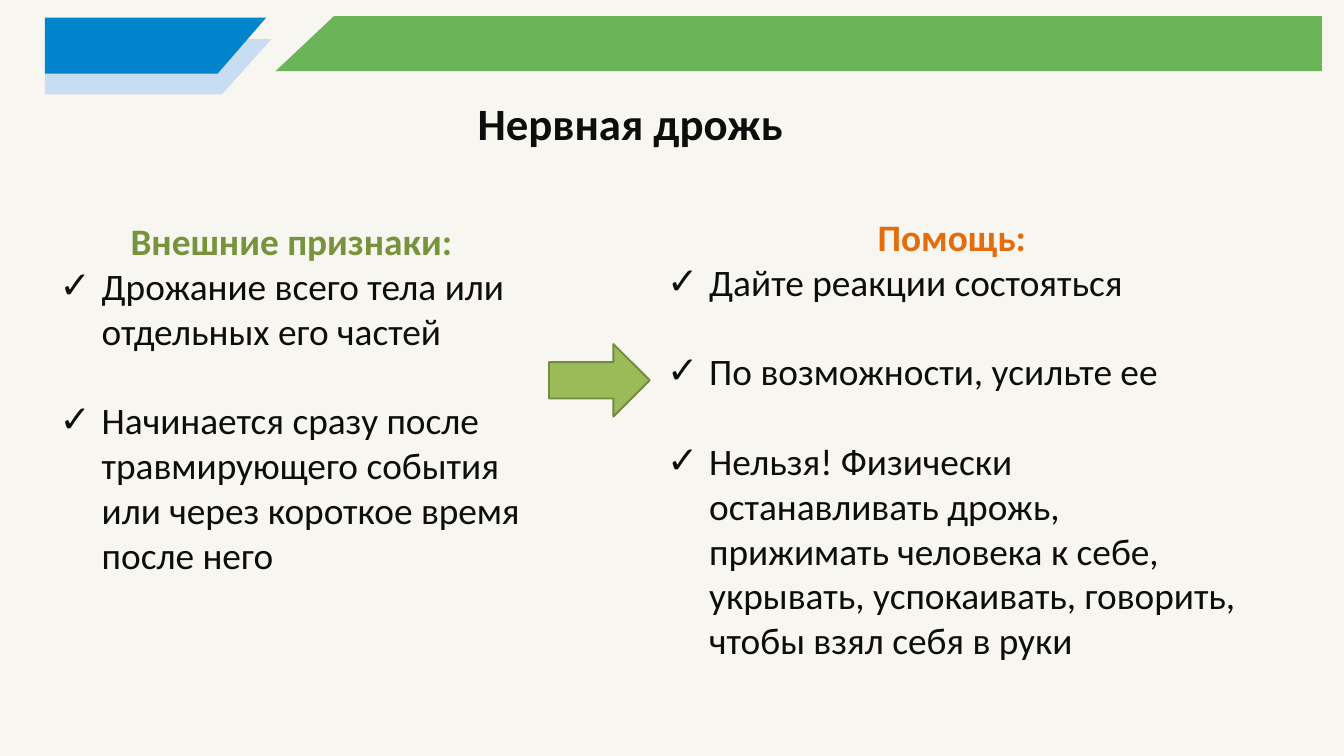
from lxml.etree import SubElement
from pptx import Presentation
from pptx.dml.color import RGBColor
from pptx.enum.shapes import MSO_SHAPE
from pptx.enum.text import MSO_ANCHOR, PP_ALIGN
from pptx.oxml.ns import qn
from pptx.util import Pt

CREAM = RGBColor(0xF7, 0xF6, 0xF1)
PALE_BLUE = RGBColor(0xC8, 0xDD, 0xF1)
BLUE = RGBColor(0x00, 0x85, 0xCC)
GREEN = RGBColor(0x69, 0xB5, 0x58)
OLIVE = RGBColor(0x77, 0x93, 0x3C)
ORANGE = RGBColor(0xE4, 0x6C, 0x0A)
INK = RGBColor(0x0D, 0x0D, 0x0D)
ARROW_FILL = RGBColor(0x9B, 0xBB, 0x59)
ARROW_LINE = RGBColor(0x73, 0x8A, 0x42)

FONT = "Calibri"
BODY_SIZE = 40
ITEM_GAP = 48  # one line of body text
HANGING = Pt(45)

SIGNS = [
    "Дрожание всего тела или отдельных его частей",
    "Начинается сразу после травмирующего события или через короткое время после него",
]
HELP = [
    "Дайте реакции состояться",
    "По возможности, усильте ее",
    "Нельзя! Физически останавливать дрожь, прижимать человека к себе, "
    "укрывать, успокаивать, говорить, чтобы взял себя в руки",
]


def add_band(slide, box, color, left_slant=0, right_slant=0):
    """Draw a bar with its upper left or lower right corner moved inwards."""
    left, top, width, height = box
    right, bottom = left + width, top + height
    builder = slide.shapes.build_freeform(Pt(left + left_slant), Pt(top))
    builder.add_line_segments(
        [
            (Pt(right), Pt(top)),
            (Pt(right - right_slant), Pt(bottom)),
            (Pt(left), Pt(bottom)),
        ]
    )
    band = builder.convert_to_shape()
    band.shadow.inherit = False
    band.fill.solid()
    band.fill.fore_color.rgb = color
    band.line.fill.background()


def add_header(slide):
    add_band(slide, (48.2, 42, 242.6, 59.2), PALE_BLUE, right_slant=53)
    add_band(slide, (48.2, 19, 236.9, 60), BLUE, right_slant=52)
    add_band(slide, (295.2, 17.3, 1121, 59), GREEN, left_slant=62.6)


def add_text_frame(slide, box):
    text_frame = slide.shapes.add_textbox(*map(Pt, box)).text_frame
    text_frame.word_wrap = True
    return text_frame


def style(paragraph, size, color, bold):
    font = paragraph.font
    font.name, font.size, font.bold = FONT, Pt(size), bold
    font.color.rgb = color


def add_check_mark(paragraph):
    properties = paragraph._p.get_or_add_pPr()
    properties.set("marL", str(HANGING))
    properties.set("indent", str(-HANGING))
    SubElement(properties, qn("a:buFont"), typeface=FONT)
    SubElement(properties, qn("a:buChar"), char="✓")


def add_title(slide, box, title):
    text_frame = add_text_frame(slide, box)
    text_frame.vertical_anchor = MSO_ANCHOR.BOTTOM
    text_frame.margin_left = text_frame.margin_right = Pt(9.4)
    text_frame.margin_top = text_frame.margin_bottom = Pt(9.4)
    paragraph = text_frame.paragraphs[0]
    paragraph.text = title
    paragraph.alignment = PP_ALIGN.CENTER
    paragraph.line_spacing = 0.9
    style(paragraph, 48, INK, True)


def add_checklist(slide, box, heading, heading_color, items):
    text_frame = add_text_frame(slide, box)
    paragraph = text_frame.paragraphs[0]
    paragraph.text = heading
    paragraph.alignment = PP_ALIGN.CENTER
    style(paragraph, BODY_SIZE, heading_color, True)
    for index, item in enumerate(items):
        paragraph = text_frame.add_paragraph()
        paragraph.text = item
        if index:
            paragraph.space_before = Pt(ITEM_GAP)
        add_check_mark(paragraph)
        style(paragraph, BODY_SIZE, INK, False)


def add_arrow(slide, box):
    arrow = slide.shapes.add_shape(MSO_SHAPE.RIGHT_ARROW, *map(Pt, box))
    arrow.shadow.inherit = False
    arrow.fill.solid()
    arrow.fill.fore_color.rgb = ARROW_FILL
    arrow.line.color.rgb = ARROW_LINE
    arrow.line.width = Pt(2)


def main():
    presentation = Presentation()
    presentation.slide_width, presentation.slide_height = Pt(1440), Pt(810)
    slide = presentation.slides.add_slide(presentation.slide_layouts[6])
    slide.background.fill.solid()
    slide.background.fill.fore_color.rgb = CREAM

    add_header(slide)
    add_checklist(slide, (56.9, 230.4, 510.5, 562.3), "Внешние признаки:", OLIVE, SIGNS)
    add_title(slide, (283, 100, 795.6, 70), "Нервная дрожь ")
    add_checklist(slide, (707.8, 226, 624.2, 637.2), "Помощь:", ORANGE, HELP)
    add_arrow(slide, (588.2, 368.6, 108, 77.8))
    presentation.save("out.pptx")


if __name__ == "__main__":
    main()
